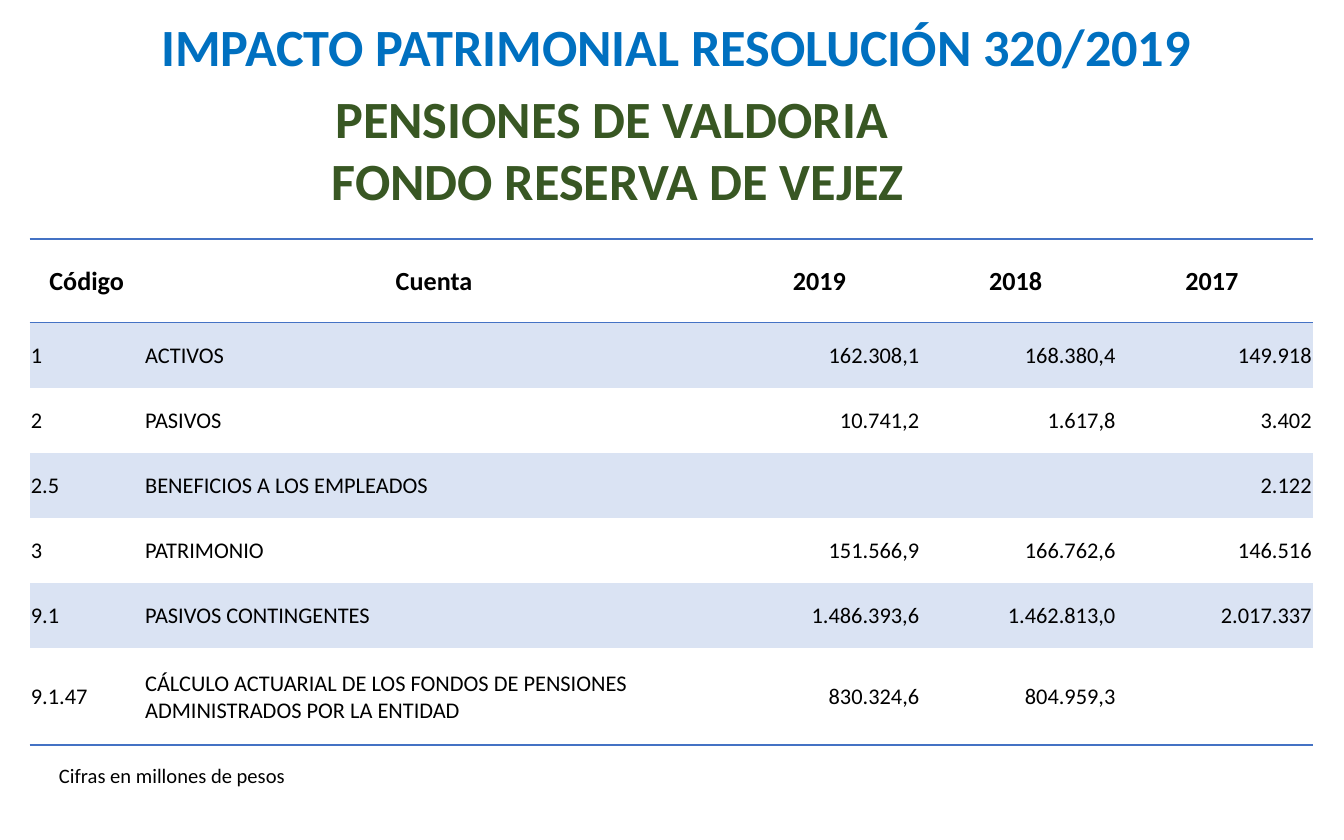
from lxml.etree import SubElement as Sub
from pptx import Presentation
from pptx.dml.color import RGBColor as RGB
from pptx.enum.text import MSO_ANCHOR as Anchor, PP_ALIGN as Align
from pptx.oxml.ns import qn
from pptx.util import Inches, Pt

BLUE = RGB(0x00, 0x70, 0xC0)
GREEN = RGB(0x38, 0x57, 0x23)
BLACK = RGB(0, 0, 0)
RULE = RGB(0x44, 0x72, 0xC4)
BAND = RGB(0xDA, 0xE3, 0xF3)
FONT = "Calibri"
PLAIN = "{2D5ABB26-0587-4C30-8999-92F81FD0307C}"  # table style without grid

# Content: lines, place, size, bold, colour, alignment
TEXTS = [
    (["IMPACTO PATRIMONIAL RESOLUCIÓN 320/2019"],
     (0.49, 0.06, 9.08, 0.57), 28, True, BLUE, Align.CENTER),
    (["PENSIONES DE VALDORIA ", "FONDO RESERVA DE VEJEZ"],
     (1.48, 0.59, 6.23, 1.04), 28, True, GREEN, Align.CENTER),
    (["Cifras en millones de pesos"],
     (0.34, 5.63, 2.59, 0.29), 11, False, BLACK, Align.LEFT),
]
ROWS = [
    ("Código", "Cuenta", "2019 ", "2018 ", "2017 "),
    ("1", "ACTIVOS", "162.308,1", "168.380,4", "149.918"),
    ("2", "PASIVOS", "10.741,2", "1.617,8", "3.402"),
    ("2.5", "BENEFICIOS A LOS EMPLEADOS", "", "", "2.122"),
    ("3", "PATRIMONIO", "151.566,9", "166.762,6", "146.516"),
    ("9.1", "PASIVOS CONTINGENTES", "1.486.393,6", "1.462.813,0", "2.017.337"),
    ("9.1.47", "CÁLCULO ACTUARIAL DE LOS FONDOS DE PENSIONES "
     "ADMINISTRADOS POR LA ENTIDAD", "830.324,6", "804.959,3", ""),
]
WIDTHS = [0.85, 4.32] + [1.46] * 3
HEIGHTS = [0.62] + [0.485] * 5 + [0.72]
LAST = len(ROWS) - 1


def write(par, text, size, bold, color, align):
    par.alignment = align
    par.font.size = Pt(size)
    if text:
        run = par.add_run()
        run.text = text
        font = run.font
        font.name, font.size, font.bold = FONT, Pt(size), bold
        font.color.rgb = color


def rule(cell, side):
    line = Sub(cell._tc.get_or_add_tcPr(), qn("a:" + side), w=str(Pt(1)))
    fill = Sub(line, qn("a:solidFill"))
    Sub(fill, qn("a:srgbClr"), val=str(RULE))


deck = Presentation()
deck.slide_width, deck.slide_height = Inches(10), Inches(6.25)
slide = deck.slides.add_slide(deck.slide_layouts[6])

# Titles and footnote
for lines, place, *style in TEXTS:
    frame = slide.shapes.add_textbox(*map(Inches, place)).text_frame
    frame.word_wrap = True
    for i, text in enumerate(lines):
        par = frame.add_paragraph() if i else frame.paragraphs[0]
        write(par, text, *style)

# Table of accounts
table = slide.shapes.add_table(
    len(ROWS), len(WIDTHS), Inches(0.22), Inches(1.78),
    Inches(sum(WIDTHS)), Inches(sum(HEIGHTS))).table
table.horz_banding = False
table._tbl.tblPr.find(qn("a:tableStyleId")).text = PLAIN
for col, width in zip(table.columns, WIDTHS):
    col.width = Inches(width)
for row, height in zip(table.rows, HEIGHTS):
    row.height = Inches(height)

for r, row in enumerate(ROWS):
    for c, text in enumerate(row):
        cell = table.cell(r, c)
        cell.vertical_anchor = Anchor.MIDDLE
        cell.margin_left = cell.margin_right = cell.margin_top = Inches(0.01)
        cell.margin_bottom = 0
        # Rules above and below the header, and under the last row
        if r == 0:
            rule(cell, "lnT")
        if r in (0, LAST):
            rule(cell, "lnB")
        # Odd rows are banded
        if r % 2:
            cell.fill.solid()
            cell.fill.fore_color.rgb = BAND
        else:
            cell.fill.background()
        head = r == 0
        align = Align.CENTER if head else Align.RIGHT if c > 1 else Align.LEFT
        write(cell.text_frame.paragraphs[0], text, 14 if head else 12,
              head, BLACK, align)

deck.save("out.pptx")
